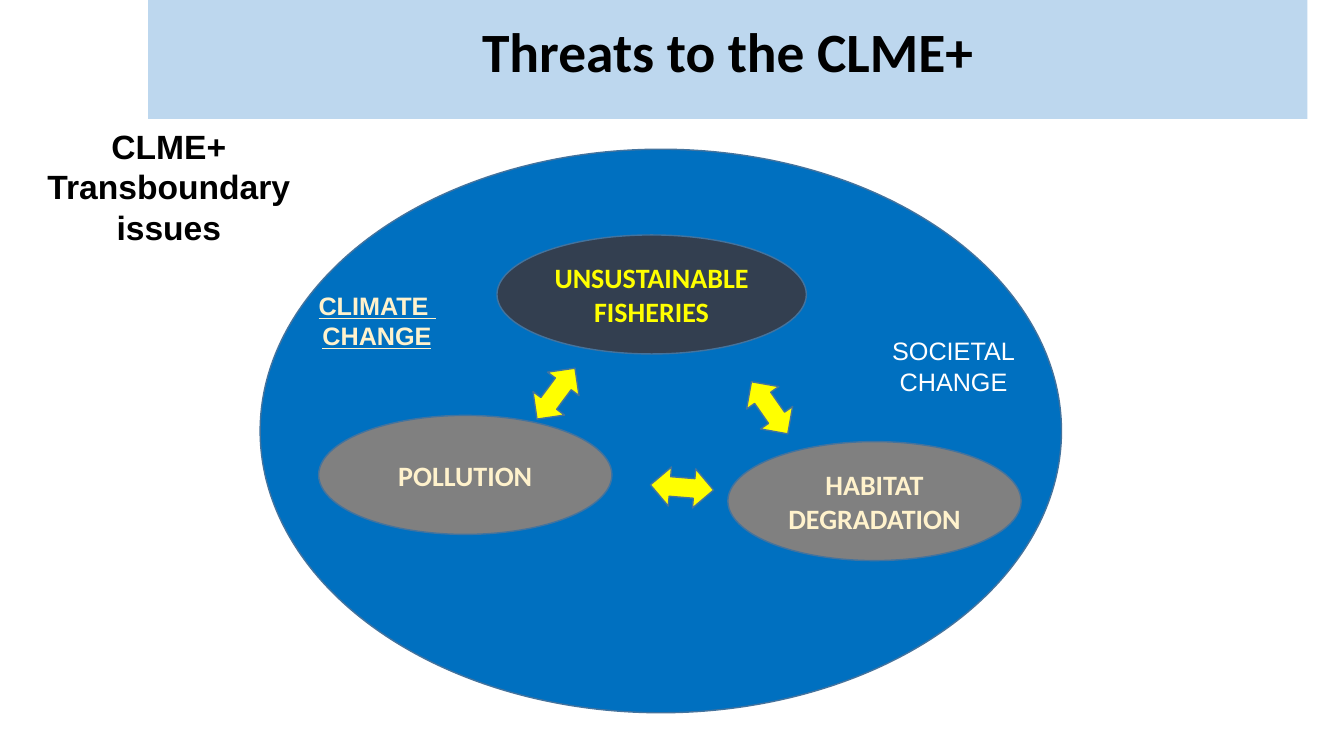
import dataclasses

import pptx
import pptx.dml.color
import pptx.enum.shapes
import pptx.enum.text
import pptx.util

Pt = pptx.util.Pt
SHAPE = pptx.enum.shapes.MSO_SHAPE
ANCHOR = pptx.enum.text.MSO_ANCHOR
AUTO = pptx.enum.text.MSO_AUTO_SIZE


@dataclasses.dataclass(frozen=True)
class Theme:
    banner: str = "BDD7EE"
    sea: str = "0070C0"
    outline: str = "43739E"
    grey: str = "808080"
    navy: str = "333F50"
    yellow: str = "FFFF00"
    cream: str = "FFF2CC"
    white: str = "FFFFFF"
    black: str = "000000"
    head_font: str = "Calibri"
    body_font: str = "Arial"
    title: float = 39.6
    heading: float = 24
    threat: float = 20
    driver: float = 18


T = Theme()


def rgb(value):
    return pptx.dml.color.RGBColor.from_string(value)


def write(tf, text, *, size, font, color, bold=False, underline=False,
          anchor=ANCHOR.TOP, spacing=None):
    """Fill a text frame with centred text, one paragraph per line of text."""
    tf.word_wrap = True
    tf.vertical_anchor = anchor
    for i, line in enumerate(text.split("\n")):
        p = tf.paragraphs[0] if i == 0 else tf.add_paragraph()
        p.alignment = pptx.enum.text.PP_ALIGN.CENTER
        if spacing:
            p.line_spacing = spacing
        r = p.add_run()
        r.text = line
        r.font.size = Pt(size)
        r.font.name = font
        r.font.bold = bold
        r.font.underline = underline
        r.font.color.rgb = rgb(color)


def add_outlined(s, kind, box, fill):
    sp = s.shapes.add_shape(kind, *map(Pt, box))
    sp.shadow.inherit = False
    sp.fill.solid()
    sp.fill.fore_color.rgb = rgb(fill)
    sp.line.color.rgb = rgb(T.outline)
    sp.line.width = Pt(1)
    return sp


def add_label(s, box, text, **fmt):
    tf = s.shapes.add_textbox(*map(Pt, box)).text_frame
    write(tf, text, font=T.body_font, **fmt)
    tf.auto_size = AUTO.SHAPE_TO_FIT_TEXT


def add_title(s, box):
    sp = s.shapes.title
    sp.left, sp.top, sp.width, sp.height = map(Pt, box)
    sp.fill.solid()
    sp.fill.fore_color.rgb = rgb(T.banner)
    tf = sp.text_frame
    tf.auto_size = AUTO.NONE
    tf.margin_bottom = Pt(8)
    write(tf, "Threats to the CLME+", size=T.title, font=T.head_font,
          color=T.black, bold=True, anchor=ANCHOR.MIDDLE, spacing=0.9)


def add_threat_map(s, box):
    """Draw the sea ellipse with its threats, two-way arrows and drivers."""
    left, top, _, _ = box
    add_outlined(s, SHAPE.OVAL, box, T.sea)

    threats = [
        ("HABITAT DEGRADATION", 334.1, 208.8, 209.5, T.grey, T.cream),
        ("UNSUSTAINABLE FISHERIES", 169.2, 61.2, 221, T.navy, T.yellow),
        ("POLLUTION", 41.8, 190.1, 209.5, T.grey, T.cream),
    ]
    for text, x, y, w, fill, color in threats:
        sp = add_outlined(s, SHAPE.OVAL, (left + x, top + y, w, 85), fill)
        write(sp.text_frame, text, size=T.threat, font=T.head_font,
              color=color, bold=True, anchor=ANCHOR.MIDDLE)

    arrows = [(197.3, 151.9, 36.7), (349.9, 162, 325.1), (287.3, 218.9, 94.7)]
    for x, y, angle in arrows:
        sp = add_outlined(s, SHAPE.UP_DOWN_ARROW,
                          (left + x, top + y, 28.1, 45.4), T.yellow)
        sp.rotation = angle

    drivers = [
        ("CLIMATE \nCHANGE", -4.3, 97.2, T.cream, True),
        ("SOCIETAL\nCHANGE", 407.5, 129.6, T.white, False),
    ]
    for text, x, y, color, strong in drivers:
        add_label(s, (left + x, top + y, 175.7, 51), text, size=T.driver,
                  color=color, bold=strong, underline=strong)


def main():
    prs = pptx.Presentation()
    prs.slide_width, prs.slide_height = Pt(960), Pt(540)
    s = prs.slides.add_slide(prs.slide_layouts[5])
    add_threat_map(s, (185.8, 106.6, 572.4, 402.5))
    add_label(s, (18.7, 86.4, 203.8, 94.3), "CLME+ Transboundary issues",
              size=T.heading, color=T.black, bold=True)
    add_title(s, (105.8, -2.2, 828, 87.1))
    prs.save("out.pptx")


if __name__ == "__main__":
    main()
